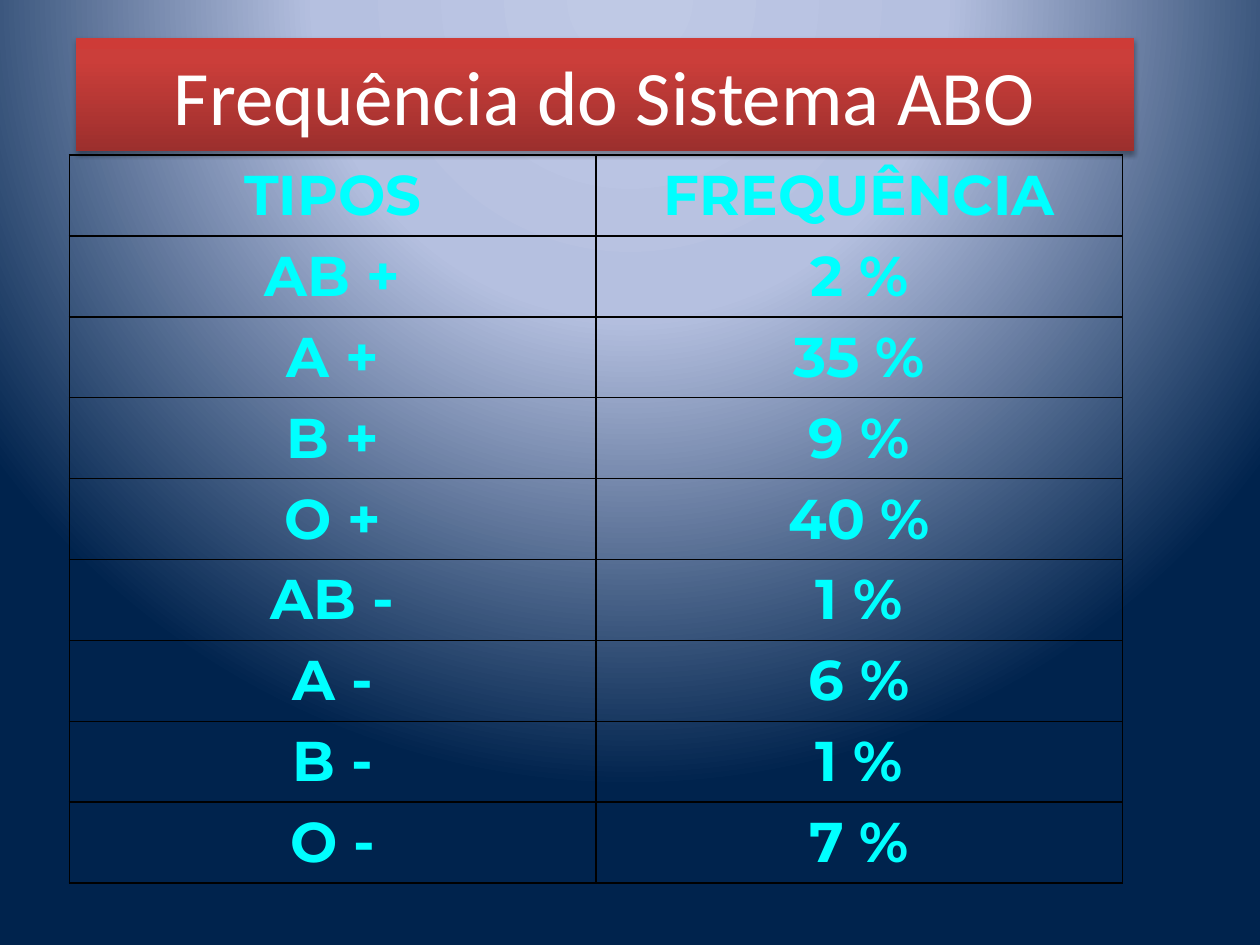
"""Build a slide with the frequency table of the ABO blood groups."""
from dataclasses import dataclass

from pptx import Presentation
from pptx.dml.color import RGBColor as Color
from pptx.enum.text import MSO_ANCHOR as Anchor, PP_ALIGN as Align
from pptx.oxml import parse_xml
from pptx.oxml.ns import nsdecls, qn
from pptx.slide import Slide
from pptx.util import Inches, Pt

WIDTH, HEIGHT = Inches(10), Inches(7.5)
WHITE = Color(0xFF, 0xFF, 0xFF)
CYAN = Color(0x00, 0xFF, 0xFF)
BLACK = Color(0x00, 0x00, 0x00)
SKY = ((0, Color(0xBF, 0xC9, 0xE5)), (40, Color(0xB5, 0xC0, 0xE0)), (100, Color(0x00, 0x23, 0x4D)))
RED = ((0, Color(0x9C, 0x2F, 0x2D)), (80, Color(0xCB, 0x3E, 0x3A)), (100, Color(0xCE, 0x3B, 0x37)))
GLOW = '<a:path path="circle"><a:fillToRect l="50000" t="-80000" r="50000" b="180000"/></a:path>'
UPWARD = '<a:lin ang="16200000" scaled="0"/>'

TITLE = "Frequência do Sistema ABO"
ROWS = (
    ("TIPOS", "FREQUÊNCIA"),
    ("AB +", "2 %"),
    ("A +", "35 %"),
    ("B +", "9 %"),
    ("O +", "40 %"),
    ("AB -", "1 %"),
    ("A -", "6 %"),
    ("B -", "1 %"),
    ("O -", "7 %"),
)


def drawing(tag, content, attributes=""):
    return parse_xml(f"<a:{tag} {nsdecls('a')} {attributes}>{content}</a:{tag}>")


@dataclass
class SlidePainter:
    slide: Slide
    title_font: str = "Calibri"
    title_size: int = 44
    table_font: str = "Montserrat"
    table_size: int = 32

    def area(self, left, top, width, height):
        return int(WIDTH * left), int(HEIGHT * top), int(WIDTH * width), int(HEIGHT * height)

    def gradient(self, fill, parent, stops, direction):
        fill.gradient()
        old = next(parent.iter(qn("a:gradFill")))
        marks = "".join(
            f'<a:gs pos="{share * 1000}"><a:srgbClr val="{color}"/></a:gs>' for share, color in stops
        )
        new = drawing("gradFill", f"<a:gsLst>{marks}</a:gsLst>{direction}", 'rotWithShape="1"')
        old.getparent().replace(old, new)

    def background(self, stops, direction):
        self.gradient(self.slide.background.fill, self.slide.element, stops, direction)

    def label(self, frame, text, name, size, color, bold):
        frame.text = text
        para = frame.paragraphs[0]
        para.alignment = Align.CENTER
        font = para.font
        font.name, font.size, font.bold = name, Pt(size), bold
        font.color.rgb = color

    def title(self, text, *shares):
        box = self.slide.shapes.title
        box.left, box.top, box.width, box.height = self.area(*shares)
        self.gradient(box.fill, box.element, RED, UPWARD)
        box.shadow.inherit = False
        shade = f'<a:srgbClr val="{BLACK}"><a:alpha val="35000"/></a:srgbClr>'
        size = f'blurRad="{Pt(3.1)}" dist="{Pt(1.8)}" dir="5400000" rotWithShape="0"'
        next(box.element.iter(qn("a:effectLst"))).append(drawing("outerShdw", shade, size))
        box.text_frame.vertical_anchor = Anchor.MIDDLE
        self.label(box.text_frame, text, self.title_font, self.title_size, WHITE, False)

    def border(self, cell):
        paint = f'<a:solidFill><a:srgbClr val="{BLACK}"/></a:solidFill>'
        properties = cell._tc.get_or_add_tcPr()
        for index, side in enumerate(("lnL", "lnR", "lnT", "lnB")):
            properties.insert(index, drawing(side, paint, f'w="{Pt(1)}"'))

    def table(self, rows, *shares):
        frame = self.slide.shapes.add_table(len(rows), len(rows[0]), *self.area(*shares))
        for row, texts in zip(frame.table.rows, rows):
            for cell, text in zip(row.cells, texts):
                cell.fill.background()
                self.border(cell)
                self.label(cell.text_frame, text, self.table_font, self.table_size, CYAN, True)


def main():
    deck = Presentation()
    deck.slide_width, deck.slide_height = WIDTH, HEIGHT
    page = SlidePainter(deck.slides.add_slide(deck.slide_layouts[5]))
    page.background(SKY, GLOW)
    page.title(TITLE, 0.06, 0.04, 0.84, 0.12)
    page.table(ROWS, 0.055, 0.164, 0.836, 0.77)
    deck.save("out.pptx")


if __name__ == "__main__":
    main()
